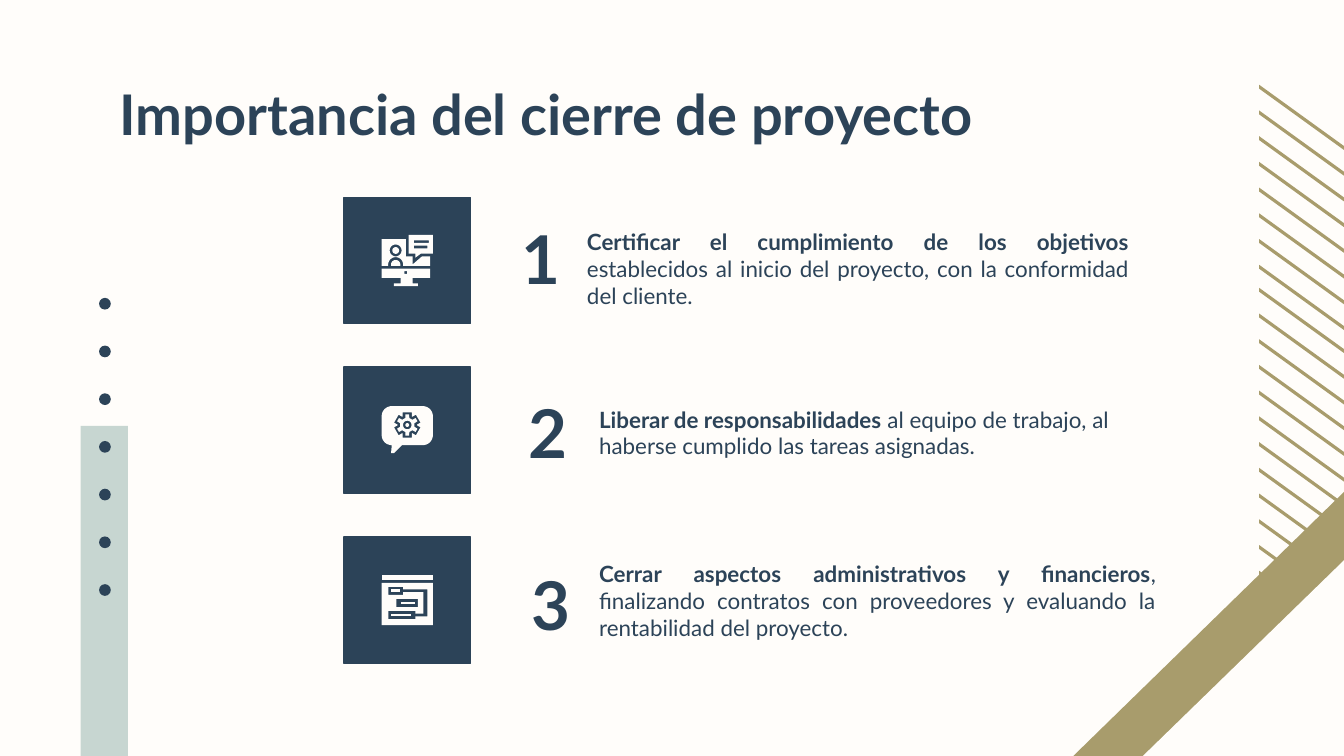
"""Build the slide on why closing a project matters."""
import math

import pptx
import pptx.dml.color
import pptx.enum.shapes
import pptx.enum.text
import pptx.util

Pt = pptx.util.Pt
SHAPE = pptx.enum.shapes.MSO_SHAPE
ALIGN = pptx.enum.text.PP_ALIGN
ANCHOR = pptx.enum.text.MSO_ANCHOR

COLORS = {"paper": "FFFDFA", "navy": "2C4358", "gold": "A89C6C", "mist": "C7D6D1"}
UNITS_PER_POINT = 100
TILE_LEFT, TILE_TOP, TILE_SIZE, TILE_STEP = 184.3, 105.7, 67.7, 91
ICON_INSET = 20.2

REASONS = [
    {"number_box": (272.2, 124.6, 28.8, 26.6), "text_box": (307.4, 115.2, 304.6, 54),
     "align": ALIGN.JUSTIFY, "lead": "Certificar el cumplimiento de los objetivos",
     "rest": " establecidos al inicio del proyecto, con la conformidad del cliente."},
    {"number_box": (275.8, 216, 21.6, 31), "text_box": (313.9, 210.2, 312.5, 38.9),
     "align": ALIGN.LEFT, "lead": "Liberar de responsabilidades",
     "rest": " al equipo de trabajo, al haberse cumplido las tareas asignadas."},
    {"number_box": (277.9, 303.1, 28.8, 40.3), "text_box": (313.9, 293, 312.5, 50.4),
     "align": ALIGN.JUSTIFY, "lead": "Cerrar aspectos administrativos y financieros",
     "rest": ", finalizando contratos con proveedores y evaluando la rentabilidad del proyecto."},
]


def rgb(name):
    """Return the named colour."""
    return pptx.dml.color.RGBColor.from_string(COLORS[name])


def paint(shape, color, line=None):
    """Give a shape a flat fill, an optional thin line and no shadow."""
    shape.shadow.inherit = False
    shape.fill.solid()
    shape.fill.fore_color.rgb = rgb(color)
    if line:
        shape.line.color.rgb = rgb(line)
        shape.line.width = Pt(0.75)
    else:
        shape.line.fill.background()
    return shape


def add_preset(shapes, kind, box, color, line=None):
    """Add a painted preset shape in a box given in points."""
    return paint(shapes.add_shape(kind, *map(Pt, box)), color, line)


def add_corner(shapes, box, color):
    """Add a right triangle that fills the lower right corner of its box."""
    corner = add_preset(shapes, SHAPE.RIGHT_TRIANGLE, box, color)
    corner._element.spPr.xfrm.set("flipH", "1")


def add_outline(shapes, contours, color, left=0, top=0):
    """Add one freeform whose inner contours are holes."""
    scaled = [[((left + x) * UNITS_PER_POINT, (top + y) * UNITS_PER_POINT)
               for x, y in contour] for contour in contours]
    builder = shapes.build_freeform(*scaled[0][0], scale=Pt(1) / UNITS_PER_POINT)
    for index, contour in enumerate(scaled):
        if index:
            builder.move_to(*contour[0])
        builder.add_line_segments(contour[1:], close=True)
    paint(builder.convert_to_shape(), color)


def rect(x, y, width, height):
    """Return the corners of a rectangle."""
    return [(x, y), (x + width, y), (x + width, y + height), (x, y + height)]


def arc(x, y, radius, start=0, end=360, steps=24):
    """Return points on a circle between two angles in degrees."""
    angles = [math.radians(start + (end - start) * i / steps) for i in range(steps + 1)]
    return [(x + radius * math.cos(a), y + radius * math.sin(a)) for a in angles]


def gear(x, y, root, tip, root_angle, tip_angle):
    """Return the outline of a gear with six teeth."""
    corners = [(root, -root_angle), (tip, -tip_angle), (tip, tip_angle), (root, root_angle)]
    return [arc(x, y, radius, tooth + turn, steps=1)[0]
            for tooth in range(-90, 270, 60) for radius, turn in corners]


def meeting_icon():
    """Return the parts of a monitor with a person and a speech bubble."""
    screen = [(0, 2.2), (0, 16.6), (3.5, 16.6), *arc(7.5, 15.9, 4, 180, 360),
              (11.5, 16.6), (25.9, 16.6), (25.9, 11.5), (21.6, 11.5),
              (16.6, 15.8), (16.6, 11.5), (13, 11.5), (13, 2.2)]
    shoulders = [(5, 16.6), *arc(7.5, 15.9, 2.5, 180, 360), (10, 16.6)]
    stand = [(0, 18), (0, 23), (10.1, 23), (10.1, 25.9), (6.5, 25.9), (6.5, 27.4),
             (19.4, 27.4), (19.4, 25.9), (16.6, 25.9), (16.6, 23), (25.9, 23), (25.9, 18)]
    bubble = [(14.4, 0), (14.4, 10.1), (18, 10.1), (18, 12.2), (20.9, 10.1),
              (27.4, 10.1), (27.4, 0)]
    return [[screen, arc(7.5, 8.3, 3.2)], [arc(7.5, 8.3, 1.8)], [shoulders],
            [stand, rect(12.2, 19.4, 1.5, 1.5)],
            [bubble, rect(17.3, 2.9, 7.9, 1.4), rect(17.3, 5.8, 7.2, 1.4)]]


def support_icon():
    """Return the parts of a speech bubble with a gear."""
    center = (13.7, 10.8)
    bubble = [*arc(5.4, 6.1, 5.4, 180, 270), *arc(22, 6.1, 5.4, 270, 360),
              *arc(22, 16.2, 5.4, 0, 90), (10.8, 21.6), (6.5, 25.9), (5, 25.9),
              *arc(5.4, 16.2, 5.4, 90, 180)]
    return [[bubble, gear(*center, 5.2, 7.2, 28, 20)],
            [gear(*center, 3.9, 5.8, 16, 10), arc(*center, 2.3)], [arc(*center, 1)]]


def schedule_icon():
    """Return the parts of a window with a chart of linked tasks."""
    links = [(11.5, 6.5), (11.5, 7.9), (24.5, 7.9), (24.5, 22.3), (18, 22.3), (18, 23.8),
             (3.6, 23.8), (3.6, 19.4), (18, 19.4), (18, 20.9), (22.3, 20.9), (22.3, 9.4),
             (11.5, 9.4), (11.5, 10.8), (3.6, 10.8), (3.6, 6.5)]
    bars = [(10.1, 14.4, 7.9, 1.4), (5, 20.9, 10.8, 1.4), (5, 7.9, 5, 1.4), (0, 0, 27.4, 2.9)]
    window = [rect(0, 4.3, 27.4, 22.7), rect(7.9, 13, 11.5, 4.3), links]
    return [[window]] and [window, *([rect(*bar)] for bar in bars)]


def write_text(frame, text, size=12, rest="", align=ALIGN.LEFT, anchor=ANCHOR.TOP):
    """Write bold text, followed by an optional regular part."""
    frame.word_wrap = True
    frame.auto_size = pptx.enum.text.MSO_AUTO_SIZE.NONE
    frame.vertical_anchor = anchor
    frame.margin_left = frame.margin_right = frame.margin_top = frame.margin_bottom = Pt(7.2)
    paragraph = frame.paragraphs[0]
    paragraph.alignment = align
    for part, bold in ((text, True), (rest, False)):
        if part:
            run = paragraph.add_run()
            run.text = part
            run.font.name = "Lato"
            run.font.size = Pt(size)
            run.font.bold = bold
            run.font.color.rgb = rgb("navy")


def add_stripes(shapes):
    """Add two runs of slanted stripes at the right edge."""
    stripes = shapes.add_group_shape().shapes
    for first, count in ((45.4, 8), (154.2, 13)):
        for i in range(count):
            stripe = [(0, 0), (52.6, 38), (52.6, 40.1), (0, 2.1)]
            add_outline(stripes, [stripe], "gold", 674.6, first + 13.78 * i)


def add_dots(shapes):
    """Add the column of dots at the left."""
    dots = shapes.add_group_shape().shapes
    for i in range(7):
        add_preset(dots, SHAPE.OVAL, (53.1, 159.6 + 25.56 * i, 6.3, 6.3), "navy")


def add_reason(shapes, index, reason, icon):
    """Add one numbered reason with its icon tile."""
    top = TILE_TOP + TILE_STEP * index
    add_preset(shapes, SHAPE.RECTANGLE, (TILE_LEFT, top, TILE_SIZE, TILE_SIZE), "navy", "navy")
    drawing = shapes.add_group_shape().shapes
    for contours in icon:
        add_outline(drawing, contours, "paper", TILE_LEFT + ICON_INSET, top + ICON_INSET)
    number = shapes.add_textbox(*map(Pt, reason["number_box"]))
    write_text(number.text_frame, str(index + 1), size=36, anchor=ANCHOR.MIDDLE)
    statement = shapes.add_textbox(*map(Pt, reason["text_box"]))
    write_text(statement.text_frame, reason["lead"], rest=reason["rest"], align=reason["align"])


def main():
    """Build and save the slide."""
    deck = pptx.Presentation()
    deck.slide_width, deck.slide_height = Pt(720), Pt(405)
    slide = deck.slides.add_slide(deck.slide_layouts[5])
    slide.background.fill.solid()
    slide.background.fill.fore_color.rgb = rgb("paper")
    shapes = slide.shapes

    add_stripes(shapes)
    add_corner(shapes, (574.6, 262.8, 146.2, 142.6), "gold")
    add_corner(shapes, (612, 299.5, 108.7, 105.8), "paper")
    title = shapes.title
    title.left, title.top, title.width, title.height = map(Pt, (56.9, 35.3, 607, 45.4))
    write_text(title.text_frame, "Importancia del cierre de proyecto", size=30)
    icons = (meeting_icon(), support_icon(), schedule_icon())
    for index, (reason, icon) in enumerate(zip(REASONS, icons)):
        add_reason(shapes, index, reason, icon)
    add_preset(shapes, SHAPE.RECTANGLE, (43.2, 228.2, 25.4, 177.1), "mist")
    add_dots(shapes)
    deck.save("out.pptx")


if __name__ == "__main__":
    main()
